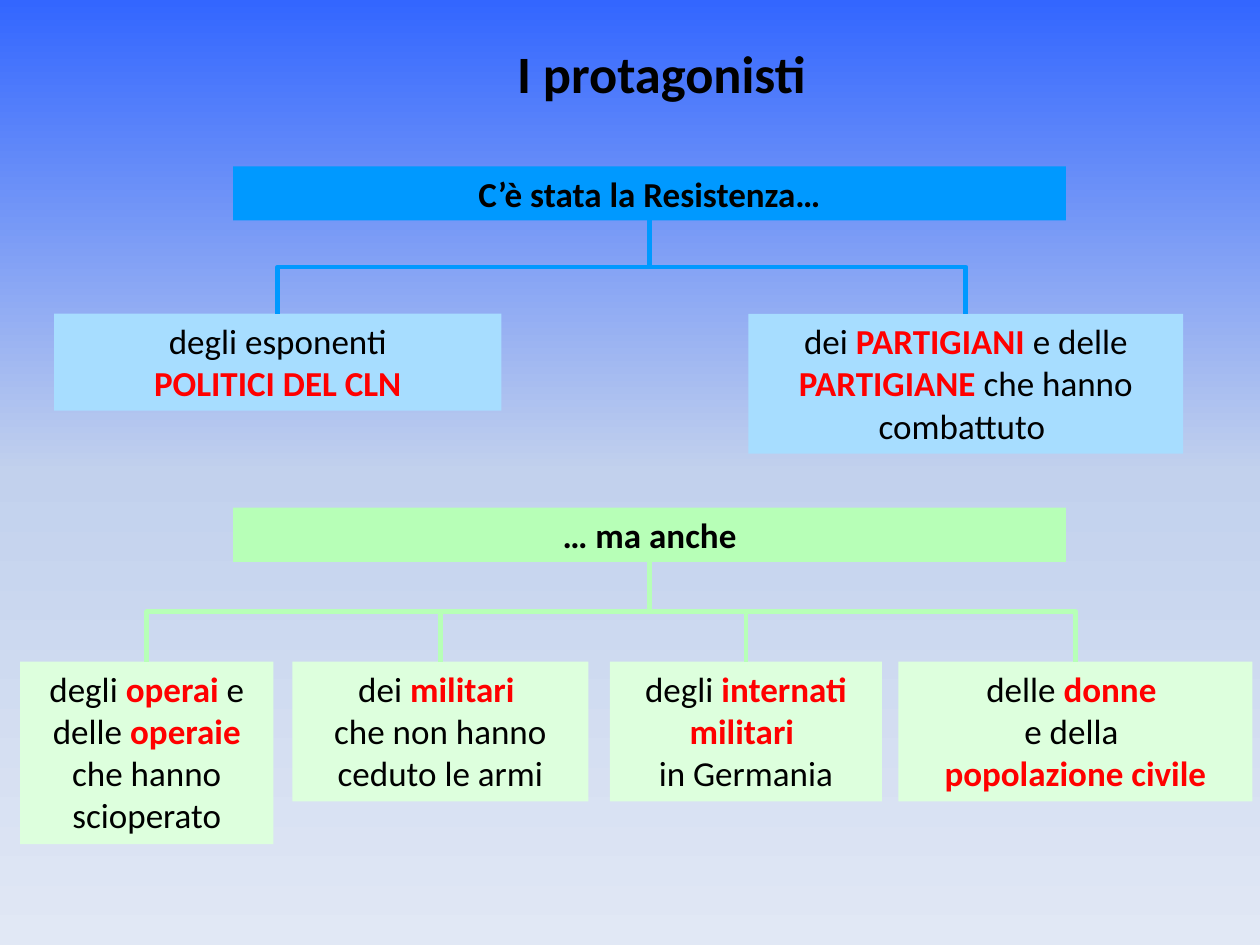
"""Build a slide with two trees of the protagonists of the Resistenza."""
from copy import deepcopy

from pptx import Presentation
from pptx import util as u
from pptx.dml.color import RGBColor
from pptx.enum import shapes, text
from pptx.oxml.ns import qn
from pptx.oxml.xmlchemy import OxmlElement

COLORS = {
    "ink": "000000", "accent": "FF0000",
    "blue": "0099FF", "pale_blue": "A7DDFF",
    "green": "B7FFB7", "pale_green": "DDFFDD",
    "sky": "3366FF", "haze": "C2D1ED", "mist": "E1E8F5",
}


def rgb(name):
    return RGBColor.from_string(COLORS[name])


class Sheet:
    font = "Calibri"
    line_width = u.Pt(2.75)

    def __init__(self, page):
        self.page = page

    def background(self, stops):
        fill = self.page.background.fill
        fill.gradient()
        fill.gradient_angle = 270
        stop_list = self.page._element.find(".//" + qn("a:gsLst"))
        while len(stop_list) < len(stops):
            stop_list.append(deepcopy(stop_list[-1]))
        for stop, (position, color) in zip(fill.gradient_stops, stops):
            stop.position = position
            stop.color.rgb = rgb(color)

    def label(self, box, wording, size, bold):
        frame = box.text_frame
        frame.word_wrap = True
        frame.auto_size = text.MSO_AUTO_SIZE.SHAPE_TO_FIT_TEXT
        frame.vertical_anchor = text.MSO_ANCHOR.TOP
        para = frame.paragraphs[0]
        para.alignment = text.PP_ALIGN.CENTER
        para.font.name = self.font
        para.font.size = u.Pt(size)
        for index, part in enumerate(wording.split("*")):
            marked = index % 2 == 1
            for row, line in enumerate(part.split("\n")):
                if row:
                    para.add_line_break()
                if line:
                    span = para.add_run()
                    span.text = line
                    span.font.bold = bold or marked
                    span.font.color.rgb = rgb("accent" if marked else "ink")

    def title(self, wording, *place):
        box = self.page.shapes.add_textbox(*map(u.Inches, place))
        self.label(box, wording, 30, True)

    def panel(self, wording, place, color, bold=False):
        box = self.page.shapes.add_shape(
            shapes.MSO_SHAPE.RECTANGLE, *map(u.Inches, place))
        box.shadow.inherit = False
        box.fill.solid()
        box.fill.fore_color.rgb = rgb(color)
        box.line.fill.background()
        self.label(box, wording, 20, bold)
        return box

    def branch(self, parent, child, color):
        link = self.page.shapes.add_connector(
            shapes.MSO_CONNECTOR.ELBOW, 0, 0, 0, 0)
        link.begin_connect(parent, 2)
        link.end_connect(child, 0)
        run, drop = link.end_x - link.begin_x, link.end_y - link.begin_y
        center_x = (link.begin_x + link.end_x) // 2
        center_y = (link.begin_y + link.end_y) // 2
        link.width, link.height = drop, abs(run)
        link.left, link.top = center_x - drop // 2, center_y - abs(run) // 2
        properties = link._element.spPr
        properties.xfrm.rot = 270 if run > 0 else 90
        properties.xfrm.flipH = run > 0
        properties.xfrm.flipV = False
        link.line.color.rgb = rgb(color)
        link.line.width = self.line_width
        properties.append(OxmlElement("a:effectLst"))

    def tree(self, heading, top, color, child_top, child_color, children):
        parent = self.panel(heading, (1.85, top, 6.61, 0.43), color, True)
        for wording, left, width, height in children:
            child = self.panel(
                wording, (left, child_top, width, height), child_color)
            self.branch(parent, child, color)


def main():
    deck = Presentation()
    deck.slide_width, deck.slide_height = u.Inches(10), u.Inches(7.5)
    sheet = Sheet(deck.slides.add_slide(deck.slide_layouts[6]))
    sheet.background([(0, "sky"), (0.5, "haze"), (1, "mist")])
    sheet.title("I protagonisti", 3.5, 0.28, 3.5, 0.6)
    sheet.tree("C’è stata la Resistenza…", 1.32, "blue", 2.49, "pale_blue", [
        ("degli esponenti\n*POLITICI DEL CLN*", 0.43, 3.55, 0.77),
        ("dei *PARTIGIANI *e delle *PARTIGIANE *che hanno combattuto ",
         5.94, 3.45, 1.11),
    ])
    sheet.tree("… ma anche", 4.03, "green", 5.25, "pale_green", [
        ("degli *operai *e delle* operaie *che hanno scioperato",
         0.16, 2.01, 1.45),
        ("dei *militari \n*che non hanno ceduto le armi", 2.32, 2.35, 1.11),
        ("degli *internati militari \n*in Germania", 4.84, 2.16, 1.11),
        ("delle *donne \n*e della \n*popolazione civile*", 7.13, 2.81, 1.11),
    ])
    deck.save("out.pptx")


if __name__ == "__main__":
    main()
